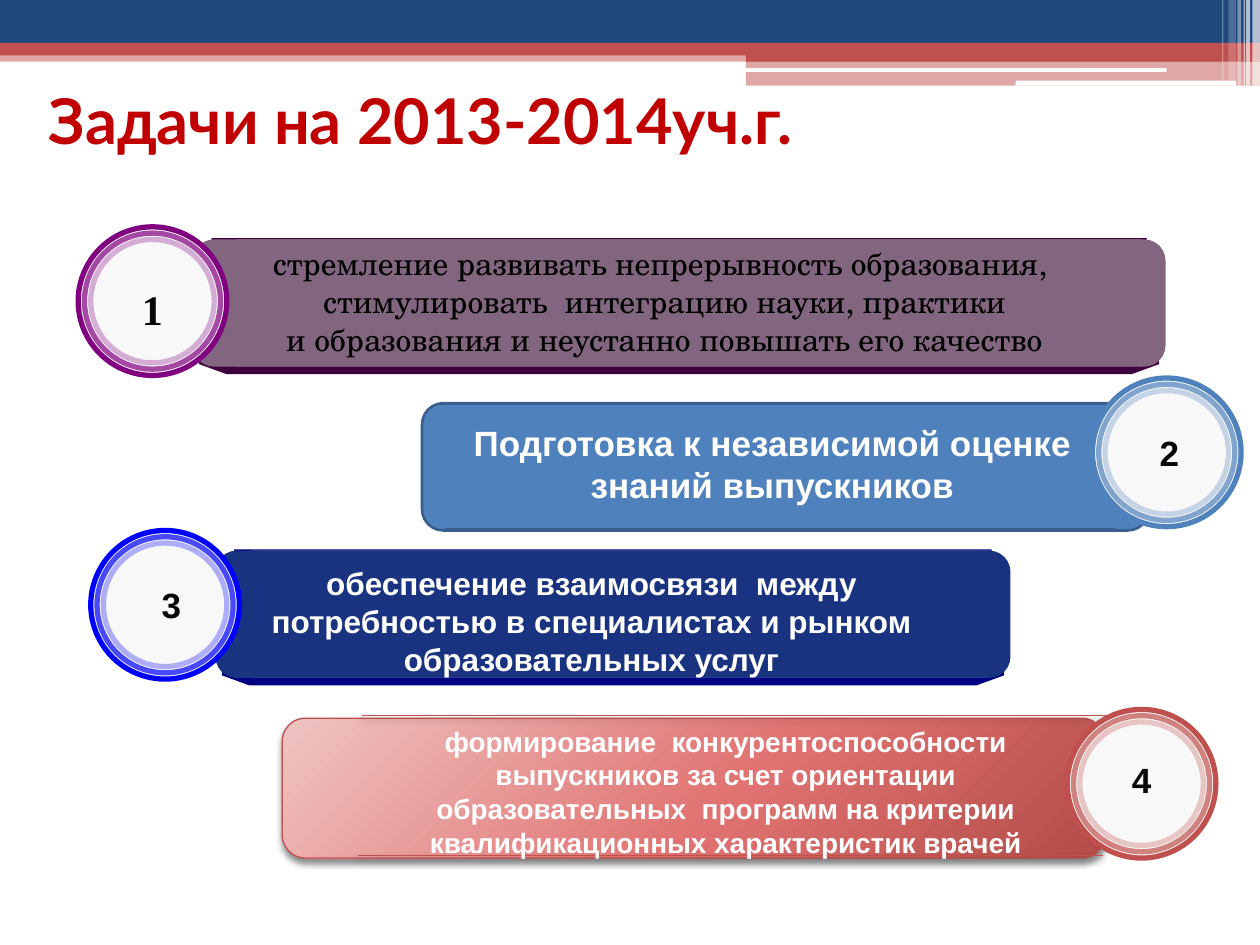
from lxml.etree import SubElement
from pptx import Presentation
from pptx.dml.color import RGBColor
from pptx.enum.shapes import MSO_CONNECTOR, MSO_SHAPE as SHAPE
from pptx.enum.text import MSO_ANCHOR, PP_ALIGN
from pptx.oxml import parse_xml
from pptx.oxml.ns import nsdecls, qn
from pptx.util import Inches, Pt

NAVY = RGBColor(0x1F, 0x49, 0x7D)
RED = RGBColor(0xC0, 0x50, 0x4D)
WHITE = RGBColor(0xFF, 0xFF, 0xFF)
BLACK = RGBColor(0, 0, 0)
TITLE_RED = RGBColor(0xC0, 0, 0)
NUMBER_INK = RGBColor(0x08, 0x08, 0x08)
DISC = RGBColor(0xF8, 0xF8, 0xF8)
PURPLE = RGBColor(0x80, 0, 0x80)
MAUVE = RGBColor(0x82, 0x66, 0x80)
DARK_PURPLE = RGBColor(0x40, 0, 0x40)
BLUE = RGBColor(0, 0, 0xFF)
DEEP_BLUE = RGBColor(0x1A, 0x33, 0x80)
DARK_BLUE = RGBColor(0, 0, 0x80)
STEEL = RGBColor(0x4F, 0x81, 0xBD)
STEEL_EDGE = RGBColor(0x3A, 0x5F, 0x8C)

prs = Presentation()
prs.slide_width, prs.slide_height = Inches(10), Inches(7.5)
slide = prs.slides.add_slide(prs.slide_layouts[6])
shapes = slide.shapes


def add_box(kind, at, fill=None, alpha=100, edge=None, width=0, edge_alpha=100):
    box = shapes.add_shape(kind, *map(Inches, at))
    box.shadow.inherit = False
    if fill is None:
        box.fill.background()
    else:
        box.fill.solid()
        box.fill.fore_color.rgb = fill
    if edge is None:
        box.line.fill.background()
    else:
        box.line.color.rgb = edge
        box.line.width = Pt(width)
    props = box._element.spPr
    for part, opacity in ((props, alpha), (props.find(qn("a:ln")), edge_alpha)):
        if opacity < 100:
            color = part.find(qn("a:solidFill"))[0]
            SubElement(color, qn("a:alpha"), val=str(opacity * 1000))
    return box


def add_text(text, at, size, color, font="Arial", bold=True,
             align=PP_ALIGN.CENTER, anchor=MSO_ANCHOR.TOP):
    frame = shapes.add_textbox(*map(Inches, at)).text_frame
    frame.word_wrap = True
    frame.vertical_anchor = anchor
    frame.text = text
    for paragraph in frame.paragraphs:
        paragraph.alignment = align
        face = paragraph.runs[0].font
        face.name, face.size, face.bold = font, Pt(size), bold
        face.color.rgb = color


# Header bands
for at, fill, alpha in [
    ((0, 0.4, 10, 0.09), RED, 50),
    ((0, 0, 10, 0.34), NAVY, 100),
    ((0, 0.34, 10, 0.1), RED, 100),
    ((5.92, 0.39, 4.08, 0.1), RED, 100),
    ((5.92, 0.48, 4.08, 0.2), RED, 50),
]:
    add_box(SHAPE.RECTANGLE, at, fill, alpha)
for at in [(5.91, 0.54, 3.35, 0.03), (8.06, 0.64, 1.75, 0.04)]:
    add_box(SHAPE.ROUNDED_RECTANGLE, at, WHITE)

# Translucent stripes in the corner
for left, width, height, alpha in [
    (9.94, 0.06, 0.68, 65), (9.89, 0.03, 0.68, 65), (9.87, 0.01, 0.68, 60),
    (9.82, 0.03, 0.68, 40), (9.75, 0.06, 0.64, 20), (9.7, 0.01, 0.64, 30),
]:
    add_box(SHAPE.RECTANGLE, (left, 0, width, height), WHITE, alpha)

add_text("Задачи на 2013-2014уч.г.", (0.29, 0.44, 9, 1.02), 36, TITLE_RED,
         font="Lato", align=PP_ALIGN.LEFT, anchor=MSO_ANCHOR.MIDDLE)

# Bevelled bars: a dark base shows under the lower edge
for left, top, width, face, base in [
    (1.71, 4.37, 6.31, DEEP_BLUE, DARK_BLUE),
    (1.53, 1.9, 7.72, MAUVE, DARK_PURPLE),
]:
    right, bottom = left + width, top + 1.01
    outline = shapes.build_freeform(Inches(left + 0.15), Inches(top - 0.01))
    outline.add_line_segments([(Inches(x), Inches(y)) for x, y in [
        (right - 0.15, top - 0.01), (right - 0.05, bottom - 0.02),
        (right - 0.27, bottom + 0.06), (left + 0.27, bottom + 0.06),
        (left + 0.05, bottom - 0.02)]])
    underside = outline.convert_to_shape()
    underside.shadow.inherit = False
    underside.fill.solid()
    underside.fill.fore_color.rgb = base
    underside.line.fill.background()
    add_box(SHAPE.ROUNDED_RECTANGLE, (left, top, width, 1.01), face)

# Flat bar and gradient bar
add_box(SHAPE.ROUNDED_RECTANGLE, (3.35, 3.2, 5.77, 1.01), STEEL,
        edge=STEEL_EDGE, width=1.5)
gradient_bar = add_box(SHAPE.ROUNDED_RECTANGLE, (2.24, 5.7, 6.53, 1.11), RED,
                       edge=RED, width=0.75)
stops = "".join(f'<a:gs pos="{pos}000"><a:srgbClr val="{color}"/></a:gs>'
                for pos, color in [(0, "EFC4C3"), (55, "E07371"), (100, "B34B48")])
bar_props = gradient_bar._element.spPr
bar_props.replace(bar_props.find(qn("a:solidFill")), parse_xml(
    f'<a:gradFill {nsdecls("a")} rotWithShape="1"><a:gsLst>{stops}</a:gsLst>'
    '<a:path path="circle"><a:fillToRect l="-40000" t="-90000" r="140000" b="190000"/>'
    '</a:path></a:gradFill>'))

# Edge lines of the bars
shaded = [gradient_bar]
for left, right, y, color, width, alpha in [
    (2, 7.84, 5.38, WHITE, 0.25, 15), (2.01, 7.86, 4.37, WHITE, 0.25, 25),
    (2.84, 8.75, 6.79, RED, 0.75, 100), (2.87, 8.78, 5.68, RED, 0.75, 100),
    (3.53, 8.85, 4.2, STEEL_EDGE, 1.5, 100), (3.49, 8.8, 3.2, STEEL_EDGE, 1.5, 100),
    (1.87, 9.06, 2.91, WHITE, 0.25, 15), (1.87, 9.06, 1.9, WHITE, 0.25, 25),
]:
    edge = shapes.add_connector(MSO_CONNECTOR.STRAIGHT, Inches(left), Inches(y),
                                Inches(right), Inches(y))
    edge.line.color.rgb = color
    edge.line.width = Pt(width)
    props = edge._element.spPr
    SubElement(props, qn("a:effectLst"))
    if alpha < 100:
        SubElement(props.find(qn("a:ln")).find(qn("a:solidFill"))[0],
                   qn("a:alpha"), val=str(alpha * 1000))
    if color == RED:
        shaded.append(edge)

# Soft shadow below the gradient bar and its edges
for item in shaded:
    shadow = SubElement(item._element.spPr.find(qn("a:effectLst")), qn("a:outerShdw"),
                        blurRad=str(Pt(4)), dist=str(Pt(2)), dir="5400000",
                        rotWithShape="0")
    SubElement(SubElement(shadow, qn("a:srgbClr"), val="000000"),
               qn("a:alpha"), val="45000")

# Task wording
add_text("обеспечение взаимосвязи  между потребностью в специалистах и рынком "
         "образовательных услуг", (2.03, 4.43, 5.33, 1.01), 18, WHITE)
add_text("формирование  конкурентоспособности выпускников за счет ориентации "
         "образовательных  программ на критерии квалификационных характеристик врачей",
         (2.87, 5.7, 5.78, 1.18), 16, WHITE)
add_text("Подготовка к независимой оценке знаний выпускников",
         (3.55, 3.3, 5.16, 0.77), 20, WHITE)
add_text("стремление развивать непрерывность образования, \n"
         " стимулировать  интеграцию науки, практики \n"
         "и образования и неустанно повышать его качество",
         (2.01, 1.89, 6.53, 1.01), 18, BLACK, font="TeX Gyre Schola", bold=False)

# Numbered discs with three fading rings
for number, left, top, color, label_left, label_top, size, font in [
    ("1", 0.62, 1.8, PURPLE, 0.62, 2.23, 24, "Times New Roman"),
    ("2", 8.67, 3, STEEL, 8.69, 3.37, 20, "Arial"),
    ("3", 0.72, 4.21, BLUE, 0.77, 4.58, 20, "Arial"),
    ("4", 8.47, 5.63, RED, 8.47, 5.97, 20, "Arial"),
]:
    for ring, (fill, alpha) in enumerate([(DISC, 100), (None, 70), (None, 30)]):
        inset = 0.05 * ring
        diameter = 1.18 - 2 * inset
        add_box(SHAPE.OVAL, (left + inset, top + inset, diameter, diameter), fill,
                edge=color, width=3, edge_alpha=alpha)
    add_text(number, (label_left, label_top, 1.18, 0.44), size, NUMBER_INK,
             font=font, anchor=MSO_ANCHOR.MIDDLE)

prs.save("out.pptx")
